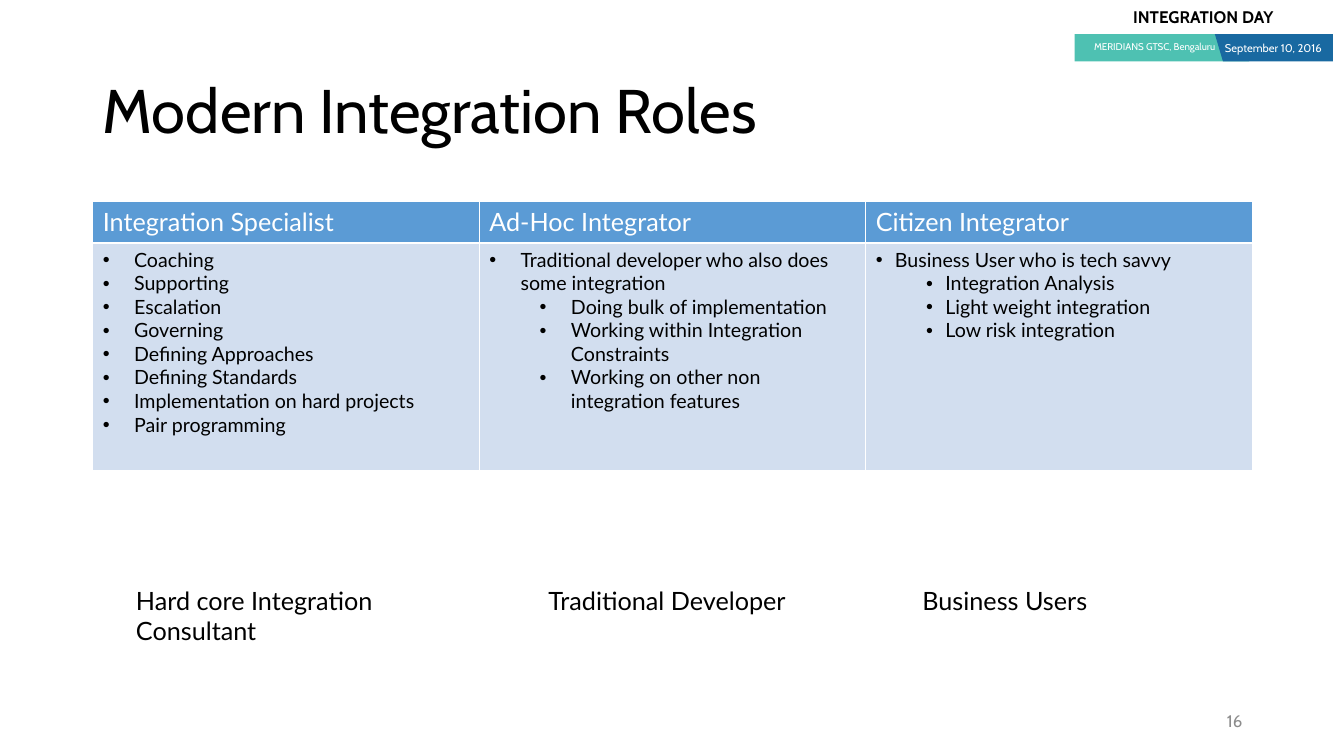
from dataclasses import dataclass

from lxml import etree
from pptx import Presentation
from pptx import util as u
from pptx.dml.color import RGBColor
from pptx.enum import shapes, text
from pptx.oxml.ns import qn


@dataclass(frozen=True)
class Theme:
    heading_font: str = "Cabin"
    body_font: str = "Lato"
    black: str = "000000"
    white: str = "FFFFFF"
    grey: str = "8C8C8C"
    teal: str = "4EC1B2"
    navy: str = "1969A1"
    header_fill: str = "5B9BD5"
    body_fill: str = "D2DEEF"
    title_size: int = 44
    label_size: int = 18
    list_size: int = 14
    small_size: int = 12
    date_size: int = 8
    venue_size: int = 7


THEME = Theme()

# Each role: heading, bullet hang in inches, (level, wording) list.
ROLES = [
    ("Integration Specialist", 0.31, [
        (0, "Coaching"),
        (0, "Supporting"),
        (0, "Escalation"),
        (0, "Governing"),
        (0, "Defining Approaches"),
        (0, "Defining Standards"),
        (0, "Implementation on hard projects"),
        (0, "Pair programming"),
    ]),
    ("Ad-Hoc Integrator", 0.31, [
        (0, "Traditional developer who also does some integration"),
        (1, "Doing bulk of implementation"),
        (1, "Working within Integration Constraints"),
        (1, "Working on other non integration features"),
    ]),
    ("Citizen Integrator", 0.19, [
        (0, "Business User who is tech savvy"),
        (1, "Integration Analysis"),
        (1, "Light weight integration"),
        (1, "Low risk integration"),
    ]),
]

PEOPLE = [
    (1.25, "Hard core Integration Consultant"),
    (5.34, "Traditional Developer"),
    (9.05, "Business Users"),
]


def style_text(para, size, color, font, bold=False):
    for span in para.runs:
        span.font.size = u.Pt(size)
        span.font.name = font
        span.font.bold = bold
        span.font.color.rgb = RGBColor.from_string(color)


def add_text(page, box, wording, size, color, font, bold=False, wrap=True,
             align=text.PP_ALIGN.LEFT, anchor=text.MSO_ANCHOR.TOP):
    frame = page.shapes.add_textbox(*map(u.Inches, box)).text_frame
    frame.word_wrap = wrap
    frame.vertical_anchor = anchor
    frame.text = wording
    para = frame.paragraphs[0]
    para.alignment = align
    style_text(para, size, color, font, bold)
    return para


def paint(shape, color):
    shape.shadow.inherit = False
    shape.fill.solid()
    shape.fill.fore_color.rgb = RGBColor.from_string(color)
    shape.line.fill.background()


def add_event_badge(page, left, top):
    font = THEME.heading_font
    add_text(page, (left + 0.48, top, 1.81, 0.3), "INTEGRATION DAY",
             THEME.small_size, THEME.black, font, bold=True)

    band_top, band_height = top + 0.32, 0.27
    venue = page.shapes.add_shape(
        shapes.MSO_SHAPE.RECTANGLE, u.Inches(left), u.Inches(band_top),
        u.Inches(1.73), u.Inches(band_height))
    paint(venue, THEME.teal)

    date_left, date_right = left + 1.39, left + 2.56
    band_bottom = band_top + band_height
    outline = page.shapes.build_freeform(
        u.Inches(date_left), u.Inches(band_top))
    corners = [(date_left + 0.08, band_bottom), (date_right, band_bottom),
               (date_right, band_top)]
    outline.add_line_segments(
        [(u.Inches(x), u.Inches(y)) for x, y in corners], close=True)
    paint(outline.convert_to_shape(), THEME.navy)

    add_text(page, (left - 0.1, top + 0.34, 1.59, 0.23),
             "MERIDIANS GTSC, Bengaluru", THEME.venue_size, THEME.white, font,
             align=text.PP_ALIGN.RIGHT)
    add_text(page, (date_left, top + 0.34, 1.28, 0.24), "September 10, 2016",
             THEME.date_size, THEME.white, font, wrap=False)


def finish_cell(cell, fill):
    """Give the cell thin white borders and a solid fill."""
    props = cell._tc.get_or_add_tcPr()
    for side in ("lnL", "lnR", "lnT", "lnB"):
        line = etree.SubElement(props, qn(f"a:{side}"), w=str(u.Pt(1)))
        solid = etree.SubElement(line, qn("a:solidFill"))
        etree.SubElement(solid, qn("a:srgbClr"), val=THEME.white)
    cell.fill.solid()
    cell.fill.fore_color.rgb = RGBColor.from_string(fill)


def add_bullet(para, level, hang):
    para.level = level
    props = para._p.get_or_add_pPr()
    props.set("marL", str(u.Inches(hang + 0.5 * level)))
    props.set("indent", str(-u.Inches(hang)))
    etree.SubElement(props, qn("a:buFont"), typeface="Arial")
    etree.SubElement(props, qn("a:buChar"), char="•")


def add_roles_table(page, box):
    table = page.shapes.add_table(2, len(ROLES), *map(u.Inches, box)).table
    table.first_row = table.horz_banding = False
    header_height = 0.41
    table.rows[0].height = u.Inches(header_height)
    table.rows[1].height = u.Inches(box[3] - header_height)

    for column, (role, hang, duties) in enumerate(ROLES):
        header, body = table.cell(0, column), table.cell(1, column)
        header.text_frame.text = role
        style_text(header.text_frame.paragraphs[0], THEME.label_size,
                   THEME.white, THEME.body_font)
        finish_cell(header, THEME.header_fill)

        body.text_frame.text = "\n".join(duty for _, duty in duties)
        for para, (level, _) in zip(body.text_frame.paragraphs, duties):
            add_bullet(para, level, hang)
            style_text(para, THEME.list_size, THEME.black, THEME.body_font)
        finish_cell(body, THEME.body_fill)


def add_people(page, top):
    for left, person in PEOPLE:
        add_text(page, (left, top, 2.65, 0.4), person, THEME.label_size,
                 THEME.black, THEME.body_font)


def build_roles_slide(deck):
    page = deck.slides.add_slide(deck.slide_layouts[6])
    add_event_badge(page, 10.66, 0.02)
    title = add_text(page, (0.92, 0.4, 11.5, 1.45), "Modern Integration Roles",
                     THEME.title_size, THEME.black, THEME.heading_font,
                     anchor=text.MSO_ANCHOR.MIDDLE)
    title.line_spacing = 0.9
    add_roles_table(page, (0.92, 2, 11.5, 2.67))
    add_people(page, 5.76)
    add_text(page, (9.42, 6.95, 3, 0.4), "16", THEME.small_size, THEME.grey,
             THEME.heading_font, align=text.PP_ALIGN.RIGHT,
             anchor=text.MSO_ANCHOR.MIDDLE)


def main():
    deck = Presentation()
    deck.slide_width, deck.slide_height = u.Inches(13.33), u.Inches(7.5)
    build_roles_slide(deck)
    deck.save("out.pptx")


if __name__ == "__main__":
    main()
